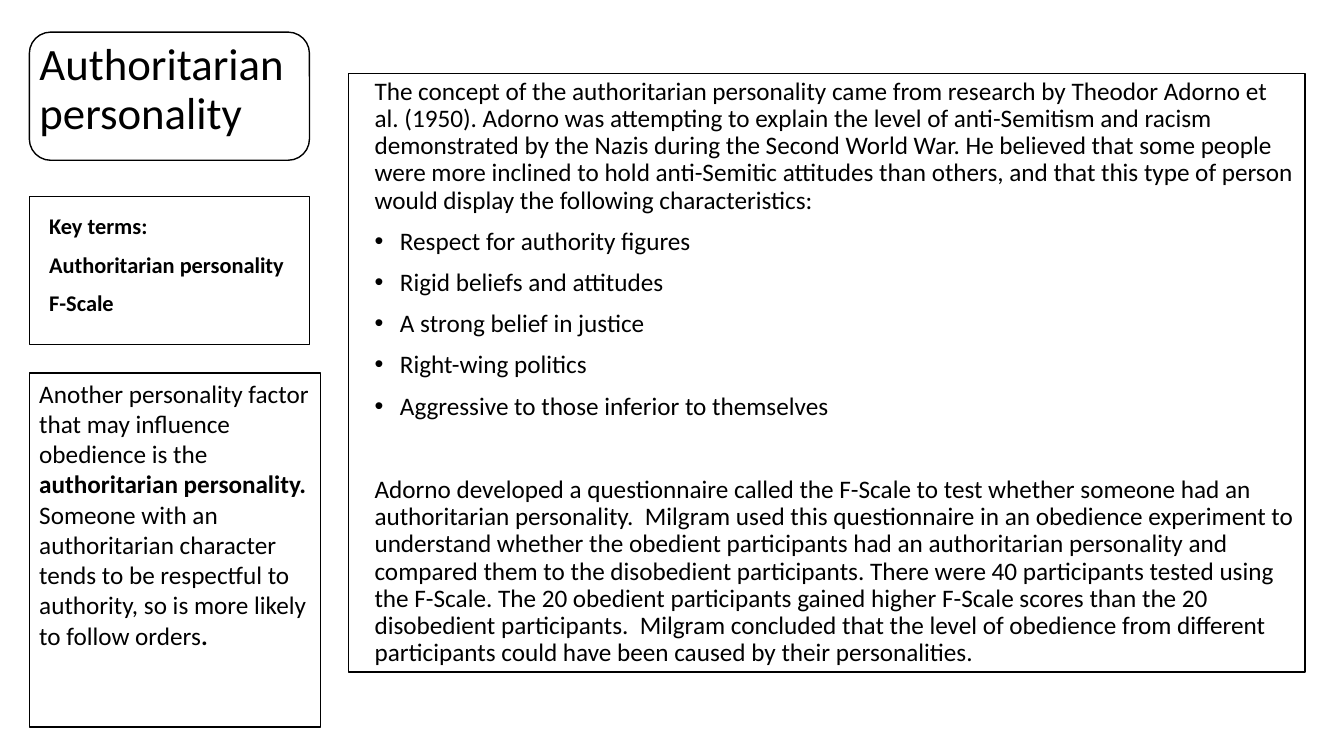
from dataclasses import dataclass

from lxml import etree
from pptx import Presentation
from pptx.dml.color import RGBColor
from pptx.enum import shapes, text
from pptx.oxml import ns
from pptx.util import Cm, Pt

BLACK = RGBColor(0, 0, 0)
FONT = "Calibri"
TITLE_ONLY = 5
BULLET_INDENT = Cm(0.64)


@dataclass(frozen=True)
class Area:
    left: float
    top: float
    width: float
    height: float

    def lengths(self) -> tuple:
        return Cm(self.left), Cm(self.top), Cm(self.width), Cm(self.height)


@dataclass(frozen=True)
class Line:
    wording: str
    bullet: bool = False
    space_before: float = 10


@dataclass(frozen=True)
class TextBlock:
    area: Area
    size: float
    bold: bool
    lines: list[Line]


@dataclass(frozen=True)
class Frame:
    area: Area
    kind: shapes.MSO_SHAPE = shapes.MSO_SHAPE.RECTANGLE


TITLE_AREA = Area(0.74, 0.81, 9.93, 2.82)

CHARACTERISTICS = [
    "Respect for authority figures",
    "Rigid beliefs and attitudes",
    "A strong belief in justice",
    "Right-wing politics",
    "Aggressive to those inferior to themselves",
]

CONCEPT = TextBlock(Area(9.19, 1.85, 23.7, 17.5), 18, False, [
    Line("The concept of the authoritarian personality came from research by "
         "Theodor Adorno et al. (1950). Adorno was attempting to explain the level "
         "of anti-Semitism and racism demonstrated by the Nazis during the Second "
         "World War. He believed that some people were more inclined to hold "
         "anti-Semitic attitudes than others, and that this type of person would "
         "display the following characteristics:"),
    *(Line(characteristic, bullet=True) for characteristic in CHARACTERISTICS),
    Line("Adorno developed a questionnaire called the F-Scale to test whether "
         "someone had an authoritarian personality.  Milgram used this "
         "questionnaire in an obedience experiment to understand whether the "
         "obedient participants had an authoritarian personality and compared them "
         "to the disobedient participants. There were 40 participants tested using "
         "the F-Scale. The 20 obedient participants gained higher F-Scale scores "
         "than the 20 disobedient participants.  Milgram concluded that the level "
         "of obedience from different participants could have been caused by their "
         "personalities.", space_before=40),
])

KEY_TERMS = TextBlock(Area(0.99, 5.31, 10.92, 10.59), 16, True, [
    Line("Key terms:"), Line("Authoritarian personality"), Line("F-Scale"),
])

TITLE_FRAME = Frame(Area(0.74, 0.81, 7.06, 3.23), shapes.MSO_SHAPE.ROUNDED_RECTANGLE)
KEY_TERMS_FRAME = Frame(Area(0.74, 4.95, 7.06, 3.73))
SUMMARY_FRAME = Frame(Area(0.74, 9.4, 7.34, 8.92))
CONCEPT_FRAME = Frame(Area(8.79, 1.85, 24.1, 15.09))

SUMMARY_RUNS = [
    ("Another personality factor that may influence obedience is the ", False),
    ("authoritarian personality. ", True),
    ("Someone with an authoritarian character tends to be respectful to authority, "
     "so is more likely to follow orders", False),
    (".", True),
]


def format_paragraph(paragraph, size: float) -> None:
    paragraph.alignment = text.PP_ALIGN.LEFT
    paragraph.font.name = FONT
    paragraph.font.size = Pt(size)
    paragraph.font.color.rgb = BLACK


def add_bullet(paragraph) -> None:
    properties = paragraph._p.get_or_add_pPr()
    properties.set("marL", str(BULLET_INDENT))
    properties.set("indent", str(-BULLET_INDENT))
    etree.SubElement(properties, ns.qn("a:buFont")).set("typeface", "Arial")
    etree.SubElement(properties, ns.qn("a:buChar")).set("char", "•")


def set_title(slide) -> None:
    title = slide.shapes.title
    title.left, title.top, title.width, title.height = TITLE_AREA.lengths()
    frame = title.text_frame
    frame.text = "Authoritarian personality"
    frame.word_wrap = True
    frame.auto_size = text.MSO_AUTO_SIZE.NONE
    frame.vertical_anchor = text.MSO_ANCHOR.BOTTOM
    paragraph = frame.paragraphs[0]
    format_paragraph(paragraph, 32)
    paragraph.line_spacing = 0.9


def add_text_block(slide, block: TextBlock) -> None:
    frame = slide.shapes.add_textbox(*block.area.lengths()).text_frame
    frame.word_wrap = True
    for index, line in enumerate(block.lines):
        paragraph = frame.add_paragraph() if index else frame.paragraphs[0]
        paragraph.text = line.wording
        format_paragraph(paragraph, block.size)
        paragraph.font.bold = block.bold
        paragraph.line_spacing = 0.9
        paragraph.space_before = Pt(line.space_before)
        if line.bullet:
            add_bullet(paragraph)


def add_frame(slide, frame: Frame):
    shape = slide.shapes.add_shape(frame.kind, *frame.area.lengths())
    shape.shadow.inherit = False
    shape.fill.background()
    shape.line.color.rgb = BLACK
    shape.line.width = Pt(1)
    return shape


def write_summary(shape) -> None:
    frame = shape.text_frame
    frame.word_wrap = True
    frame.vertical_anchor = text.MSO_ANCHOR.TOP
    paragraph = frame.paragraphs[0]
    format_paragraph(paragraph, 18)
    for wording, bold in SUMMARY_RUNS:
        run = paragraph.add_run()
        run.text = wording
        run.font.bold = bold


def main() -> None:
    presentation = Presentation()
    presentation.slide_width = Cm(33.87)
    presentation.slide_height = Cm(19.05)
    slide = presentation.slides.add_slide(presentation.slide_layouts[TITLE_ONLY])
    set_title(slide)
    for block in (CONCEPT, KEY_TERMS):
        add_text_block(slide, block)
    for frame in (TITLE_FRAME, KEY_TERMS_FRAME):
        add_frame(slide, frame)
    write_summary(add_frame(slide, SUMMARY_FRAME))
    add_frame(slide, CONCEPT_FRAME)
    presentation.save("out.pptx")


if __name__ == "__main__":
    main()
